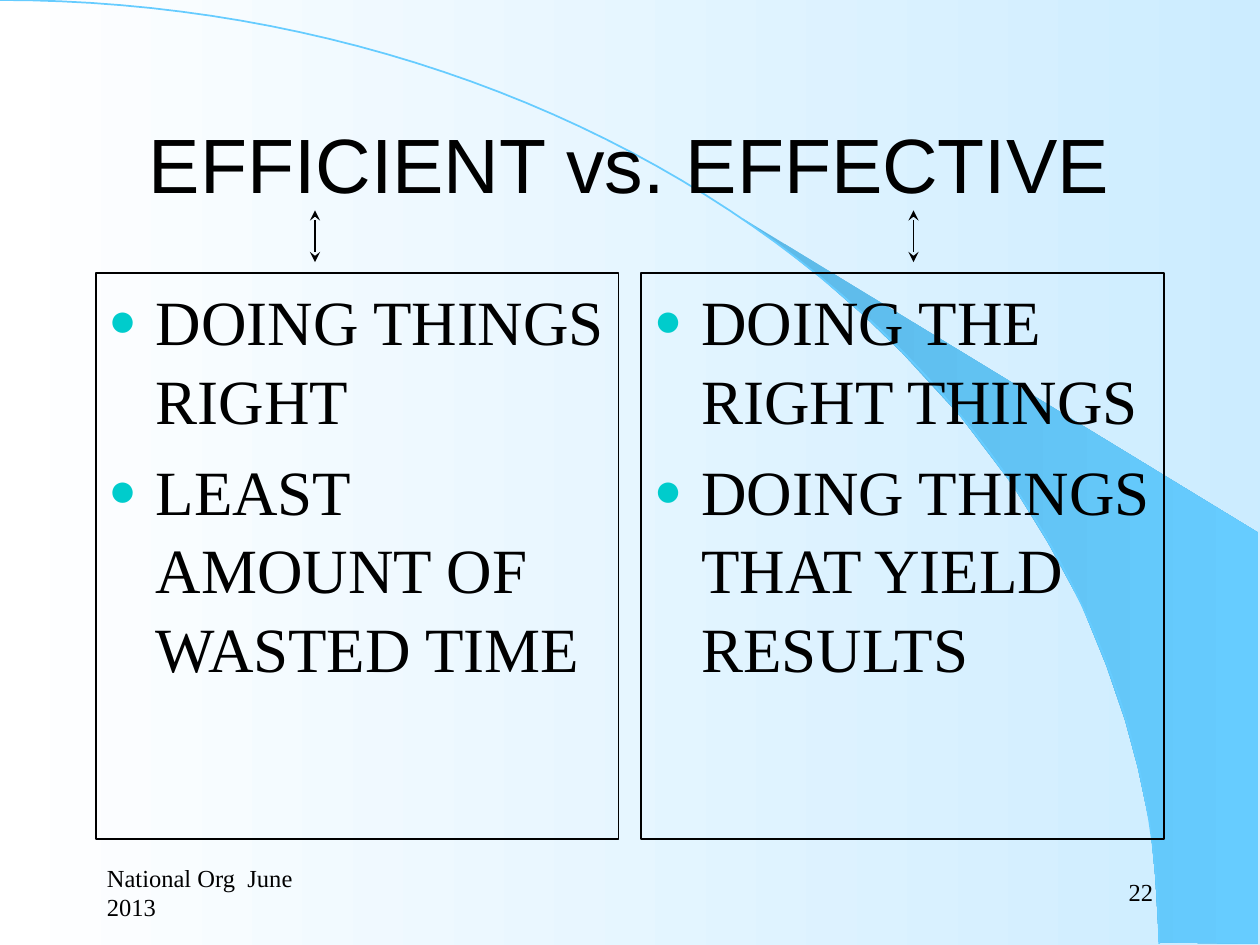
"""Builds the slide that sets efficient work against effective work."""
import math

from lxml import etree
from pptx import Presentation
from pptx.dml.color import RGBColor
from pptx.enum.shapes import MSO_CONNECTOR
from pptx.enum.text import MSO_ANCHOR, MSO_AUTO_SIZE, PP_ALIGN
from pptx.oxml.ns import qn
from pptx.util import Pt

STRAIGHT = MSO_CONNECTOR.STRAIGHT
TOP, MIDDLE = MSO_ANCHOR.TOP, MSO_ANCHOR.MIDDLE
LEFT, CENTER, RIGHT = PP_ALIGN.LEFT, PP_ALIGN.CENTER, PP_ALIGN.RIGHT
NO_FIT = MSO_AUTO_SIZE.NONE

COLORS = {
    "ink": "000000",
    "paper": "FFFFFF",
    "mist": "CCECFF",
    "sky": "66CCFF",
    "shade": "5DB9E7",
    "bullet": "00CCCC",
}
BLADE = [
    (662.4, 538.6), (719.3, 539.3), (719.3, 304.6), (424.1, 124.6),
    (449.3, 143.3), (470.2, 159.8), (493.2, 180), (515.5, 201.6),
    (548.6, 237.6), (578.2, 276.5), (599, 310.3), (617.8, 344.9),
    (632.2, 380.2), (643, 411.8), (650.2, 438.5), (657.4, 472.3),
    (660.2, 501.1),
]
ARC_WIDTH, ARC_HEIGHT, ARC_STEPS = 662.4, 539.3, 60
COLUMNS = [
    (54.7, 180, ["DOING THINGS RIGHT", "LEAST AMOUNT OF WASTED TIME"]),
    (366.5, 522, ["DOING THE RIGHT THINGS", "DOING THINGS THAT YIELD RESULTS"]),
]
FOOTERS = [(54, "National Org  June 2013", LEFT), (516.2, "22", RIGHT)]


def color(name):
    return RGBColor.from_string(COLORS[name])


def apply(target, values):
    for key, value in values.items():
        setattr(target, key, value)


class SlideStyle:
    """Holds the style and the current page."""

    heading = {"name": "Arial", "size": Pt(44)}
    body = {"name": "Times New Roman", "size": Pt(36)}
    footer = {"name": "Times New Roman", "size": Pt(14)}
    list_spacing = {"space_before": Pt(7.2), "line_spacing": 1.04}
    margins = {
        "margin_left": Pt(7.2), "margin_right": Pt(7.2),
        "margin_top": Pt(3.6), "margin_bottom": Pt(3.6),
    }

    def __init__(self, page):
        self.page = page

    def gradient(self, fill, start, end):
        fill.gradient()
        fill.gradient_angle = 0
        for stop, name in zip(fill.gradient_stops, (start, end)):
            stop.color.rgb = color(name)

    def outline(self, shape, name):
        shape.line.color.rgb = color(name)
        shape.line.width = Pt(1)

    def place(self, box, left, top, width, height):
        apply(box, {"left": Pt(left), "top": Pt(top),
                    "width": Pt(width), "height": Pt(height)})

    def set_text(self, box, lines, font, align, anchor):
        frame = box.text_frame
        apply(frame, {**self.margins, "word_wrap": True,
                      "auto_size": NO_FIT, "vertical_anchor": anchor})
        frame.text = "\n".join(lines)
        for para in frame.paragraphs:
            para.alignment = align
            for span in para.runs:
                apply(span.font, font)
                span.font.color.rgb = color("ink")

    def title(self, text, *bounds):
        box = self.page.shapes.title
        self.place(box, *bounds)
        self.set_text(box, [text], self.heading, CENTER, MIDDLE)

    def bullet_box(self, index, lines, *bounds):
        box = self.page.placeholders[index]
        self.place(box, *bounds)
        self.outline(box, "ink")
        self.set_text(box, lines, self.body, LEFT, TOP)
        for para in box.text_frame.paragraphs:
            apply(para, self.list_spacing)
            self.bullet(para)

    def bullet(self, para):
        props = para._p.get_or_add_pPr()
        props.set("marL", str(Pt(27)))
        props.set("indent", str(Pt(-27)))
        tint = etree.SubElement(props, qn("a:buClr"))
        etree.SubElement(tint, qn("a:srgbClr"), val=COLORS["bullet"])
        etree.SubElement(props, qn("a:buSzPct"), val="75000")
        etree.SubElement(props, qn("a:buFont"), typeface="Arial")
        etree.SubElement(props, qn("a:buChar"), char="●")

    def label(self, text, align, *bounds):
        box = self.page.shapes.add_textbox(*map(Pt, bounds))
        self.set_text(box, [text], self.footer, align, MIDDLE)

    def backdrop(self, points, close):
        corners = [(Pt(x), Pt(y)) for x, y in points]
        builder = self.page.shapes.build_freeform(*corners[0])
        builder.add_line_segments(corners[1:], close=close)
        shape = builder.convert_to_shape()
        shape.shadow.inherit = False
        shape.element.getparent().insert(2, shape.element)
        return shape

    def curve(self, points):
        shape = self.backdrop(points, False)
        shape.fill.background()
        self.outline(shape, "sky")

    def blade(self, points):
        shape = self.backdrop(points, True)
        self.gradient(shape.fill, "shade", "sky")
        shape.line.fill.background()

    def double_arrow(self, x, top, bottom):
        arrow = self.page.shapes.add_connector(
            STRAIGHT, Pt(x), Pt(top), Pt(x), Pt(bottom))
        self.outline(arrow, "ink")
        line = arrow.line._get_or_add_ln()
        for end in ("a:headEnd", "a:tailEnd"):
            etree.SubElement(line, qn(end), type="stealth")
        etree.SubElement(arrow.element.spPr, qn("a:effectLst"))


def main():
    deck = Presentation()
    apply(deck, {"slide_width": Pt(720), "slide_height": Pt(540)})
    page = deck.slides.add_slide(deck.slide_layouts[3])
    style = SlideStyle(page)
    style.gradient(page.background.fill, "paper", "mist")

    angles = [math.pi / 2 * step / ARC_STEPS for step in range(ARC_STEPS + 1)]
    style.curve([(ARC_WIDTH * math.sin(angle), ARC_HEIGHT * (1 - math.cos(angle)))
                 for angle in angles])
    style.blade(BLADE)

    for left, text, align in FOOTERS:
        style.label(text, align, left, 491.8, 149.8, 36)
    style.title("EFFICIENT vs. EFFECTIVE", 54, 48.2, 612, 90)
    for index, (left, arrow_x, lines) in enumerate(COLUMNS, start=1):
        style.bullet_box(index, lines, left, 156.2, 298.8, 323.3)
        style.double_arrow(arrow_x, 120.2, 149.8)
    deck.save("out.pptx")


if __name__ == "__main__":
    main()
